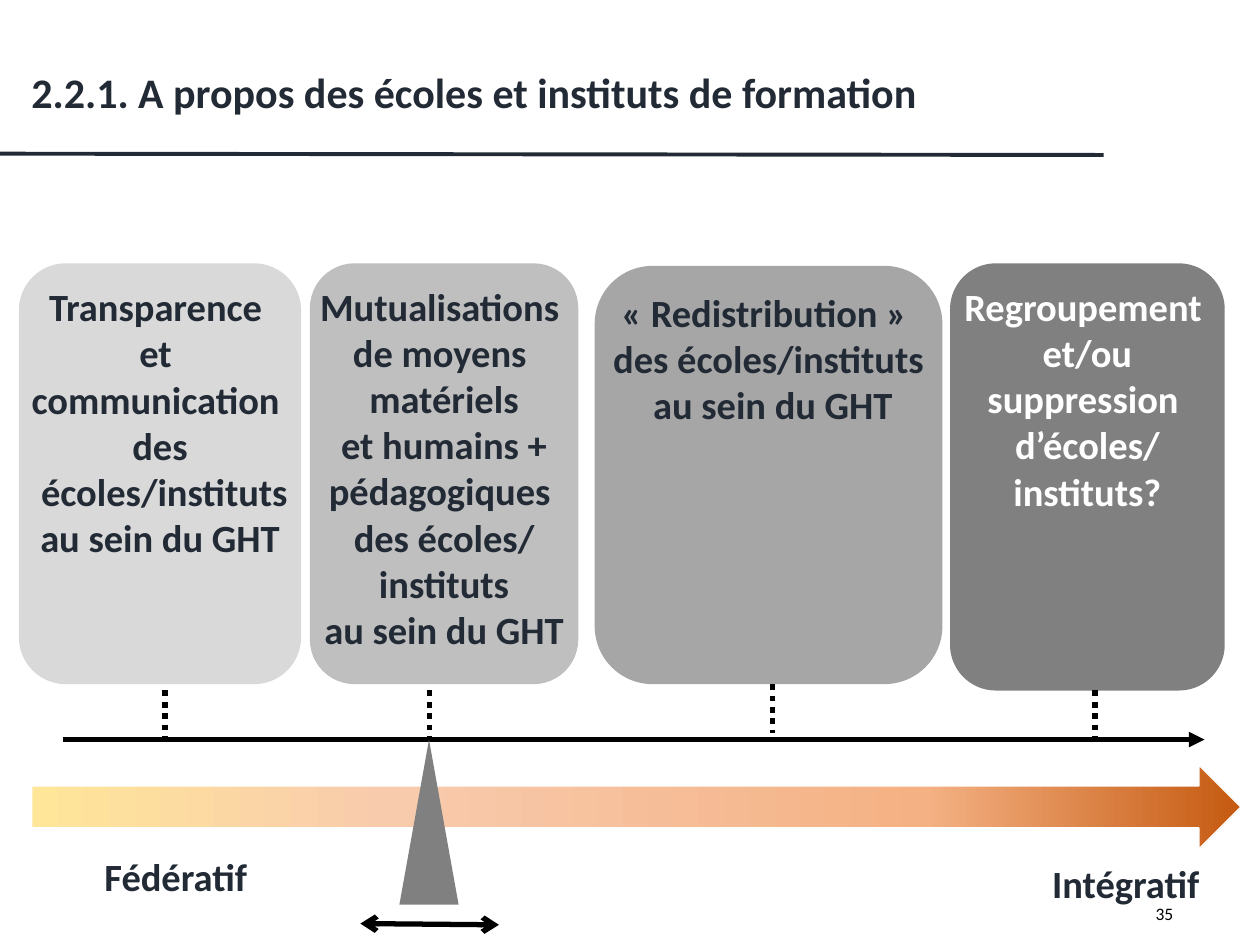
import pptx
import pptx.util
import pptx.dml.color
import pptx.enum.dml
import pptx.enum.shapes
import pptx.enum.text
import pptx.oxml
import pptx.oxml.ns

PX = 9144
INK = {
    "navy": "222A35", "black": "000000", "white": "FFFFFF",
    "pale": "D9D9D9", "light": "BFBFBF", "mid": "A6A6A6", "dark": "808080",
    "sand": "FFE699", "peach": "F8CBAD", "coral": "F4B183", "rust": "C55A11",
}
KIND = pptx.enum.shapes.MSO_SHAPE
ALIGN = pptx.enum.text.PP_ALIGN
ANCHOR = pptx.enum.text.MSO_ANCHOR
DOT = pptx.enum.dml.MSO_LINE.ROUND_DOT
NS = pptx.oxml.ns.nsdecls("a")
CARDS = [
    ((15, 209, 224, 334), "pale", "navy",
     ["Transparence ", "et ", "communication ", "des", " écoles/instituts",
      "au sein du GHT"]),
    ((246, 209, 213, 334), "light", "navy",
     ["Mutualisations ", "de moyens ", "matériels", " et humains + ",
      "pédagogiques ", "des écoles/", "instituts", "au sein du GHT"]),
    ((472, 211, 276, 332), "mid", "navy",
     ["«\u00a0Redistribution\u00a0» ", "des écoles/instituts", " au sein du GHT"]),
    ((754, 209, 218, 339), "dark", "white",
     ["Regroupement ", "et/ou", "suppression ", "d’écoles/", "instituts?"]),
]


def tint(name):
    return pptx.dml.color.RGBColor.from_string(INK[name])


def scale(box):
    return [n * PX for n in box]


def write(frame, lines, ink, size=22, bold=True, align=ALIGN.CENTER,
          anchor=ANCHOR.TOP, wrap=False):
    frame.word_wrap = wrap
    frame.vertical_anchor = anchor
    for i, line in enumerate(lines):
        para = frame.paragraphs[0] if i == 0 else frame.add_paragraph()
        para.text = line
        para.alignment = align
        font = para.font
        font.name, font.size, font.bold = "Calibri", pptx.util.Pt(size), bold
        font.color.rgb = tint(ink)


def shape(slide, kind, box, fill=None):
    item = slide.shapes.add_shape(kind, *scale(box))
    item.shadow.inherit = False
    item.line.fill.background()
    if fill:
        item.fill.solid()
        item.fill.fore_color.rgb = tint(fill)
    else:
        item.fill.background()
    return item


def rule(slide, ends, width, ink="black", dash=None, head=None, tail=None):
    link = slide.shapes.add_connector(
        pptx.enum.shapes.MSO_CONNECTOR.STRAIGHT, *scale(ends))
    link.line.width = pptx.util.Pt(width)
    link.line.color.rgb = tint(ink)
    if dash:
        link.line.dash_style = dash
    props = link._element.spPr
    stroke = props.find(pptx.oxml.ns.qn("a:ln"))
    for tag, form in (("headEnd", head), ("tailEnd", tail)):
        if form:
            stroke.append(pptx.oxml.parse_xml(f'<a:{tag} {NS} type="{form}"/>'))
    props.append(pptx.oxml.parse_xml(f"<a:effectLst {NS}/>"))


def title(slide, box):
    x, y, w, h = box
    text = slide.shapes.add_textbox(*scale(box)).text_frame
    write(text, ["2.2.1. A propos des écoles et instituts de formation"], "navy",
          24, align=ALIGN.LEFT, anchor=ANCHOR.MIDDLE, wrap=True)
    text.paragraphs[0].line_spacing = 0.9
    rule(slide, (0, y + h + 5, x + w + 2, y + h + 6), 2.25, "navy")


def card(slide, box, fill, ink, lines):
    write(shape(slide, KIND.ROUNDED_RECTANGLE, box, fill).text_frame, lines, ink)


def axis(slide, box):
    x, y, w, h = box
    rule(slide, (x, y, x + w, y), 3, tail="triangle")
    for mark, lift in ((81, 0), (291, 0), (563, 5), (819, 0)):
        rule(slide, (x + mark, y - h - lift, x + mark, y - lift), 3.25, dash=DOT)


def band(slide, box):
    x, y, w, h = box
    arrow = shape(slide, KIND.RIGHT_ARROW, box)
    arrow.line.color.rgb = tint("white")
    arrow.line.width = pptx.util.Pt(1)
    arrow.fill.gradient()
    arrow.fill.gradient_angle = 0
    stops = arrow._element.spPr.find(".//" + pptx.oxml.ns.qn("a:gsLst"))
    for old in list(stops):
        stops.remove(old)
    for at, ink in ((0, "sand"), (30, "peach"), (74, "coral"), (100, "rust")):
        stops.append(pptx.oxml.parse_xml(
            f'<a:gs {NS} pos="{at * 1000}"><a:srgbClr val="{INK[ink]}"/></a:gs>'))
    for left, top, word in ((8, 62, "Fédératif"), (762, 68, "Intégratif")):
        label = shape(slide, KIND.ROUNDED_RECTANGLE, (x + left, y + top, 213, 57))
        write(label.text_frame, [word], "navy")


def slider(slide, box):
    x, y, w, h = box
    shape(slide, KIND.ISOSCELES_TRIANGLE, box, "dark")
    rule(slide, (x - 31, y + h + 15, x + w + 32, y + h + 16), 3,
         head="arrow", tail="arrow")


def folio(slide, box):
    text = slide.shapes.add_textbox(*scale(box)).text_frame
    write(text, ["35"], "black", 10, False, ALIGN.RIGHT, wrap=True)


def main():
    deck = pptx.Presentation()
    deck.slide_width, deck.slide_height = scale((1000, 750))
    slide = deck.slides.add_slide(deck.slide_layouts[6])
    title(slide, (15, 34, 859, 83))
    for item in CARDS:
        card(slide, *item)
    axis(slide, (50, 587, 906, 39))
    band(slide, (25, 607, 960, 67))
    slider(slide, (317, 587, 47, 131))
    folio(slide, (716, 712, 225, 40))
    deck.save("out.pptx")


if __name__ == "__main__":
    main()
